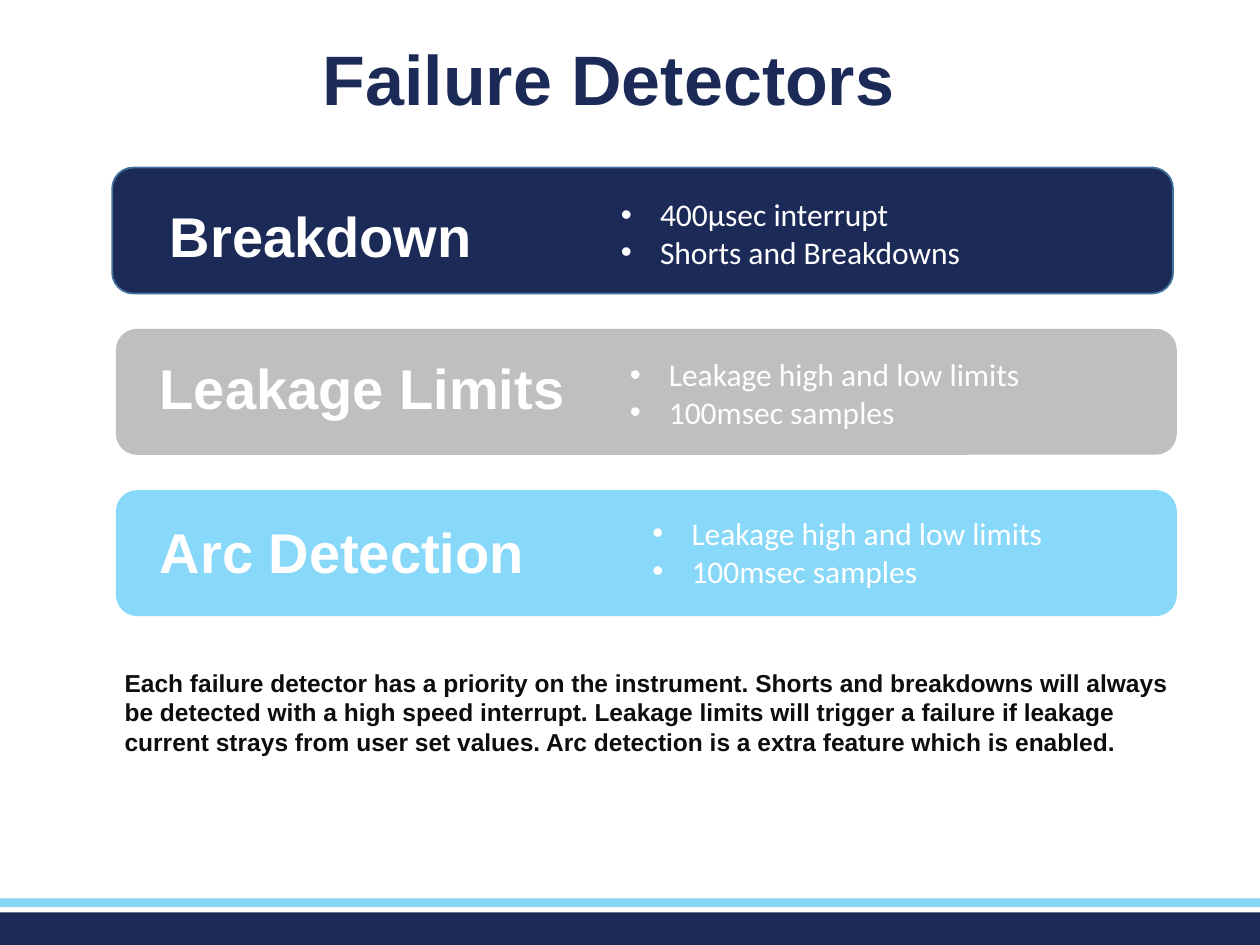
from lxml import etree
from pptx import Presentation
from pptx.dml.color import RGBColor
from pptx.enum.shapes import MSO_SHAPE
from pptx.enum.text import MSO_ANCHOR, PP_ALIGN
from pptx.oxml.ns import qn
from pptx.util import Inches, Pt

RECT, ROUND = MSO_SHAPE.RECTANGLE, MSO_SHAPE.ROUNDED_RECTANGLE
TOP, MIDDLE = MSO_ANCHOR.TOP, MSO_ANCHOR.MIDDLE
LEFT, CENTER = PP_ALIGN.LEFT, PP_ALIGN.CENTER
WIDE, HIGH = Inches(10), Inches(7.5)
COLS, ROWS = 100, 75
INK = {"navy": "1C2A58", "edge": "43739E", "gray": "BFBFBF", "sky": "87D8F9",
       "strip": "88D6F4", "white": "FFFFFF", "black": "0D0D0D"}
LIMITS = ["Leakage high and low limits", "100msec samples"]
BANDS = [
    ("Breakdown", ["400μsec interrupt", "Shorts and Breakdowns"],
     "navy", "edge", 8.9, (3.6, 2.2), (39.4, 1.7)),
    ("Leakage Limits", LIMITS, "gray", None, 9.2, (2.5, 1.5), (39.8, 1.6)),
    ("Arc Detection", LIMITS, "sky", None, 9.2, (2.5, 1.7), (41.6, 1.4)),
]
NOTE = ("Each failure detector has a priority on the instrument. Shorts and "
        "breakdowns will always be detected with a high speed interrupt. "
        "Leakage limits will trigger a failure if leakage current strays from "
        "user set values. Arc detection is a extra feature which is enabled.")


def place(box):
    """Turn a box in columns and rows into slide lengths."""
    x, y, w, h = box
    return (int(WIDE * x / COLS), int(HIGH * y / ROWS),
            int(WIDE * w / COLS), int(HIGH * h / ROWS))


def block(slide, kind, box, fill, edge=None):
    """Draw a filled shape with an optional outline."""
    shape = slide.shapes.add_shape(kind, *place(box))
    shape.shadow.inherit = False
    shape.fill.solid()
    shape.fill.fore_color.rgb = RGBColor.from_string(INK[fill])
    if edge:
        shape.line.color.rgb = RGBColor.from_string(INK[edge])
        shape.line.width = Pt(1)
    else:
        shape.line.fill.background()


def bullet(para):
    """Give a paragraph a round bullet and a hanging indent."""
    props = para._p.get_or_add_pPr()
    props.set("marL", str(Inches(0.31)))
    props.set("indent", str(-Inches(0.31)))
    etree.SubElement(props, qn("a:buFont")).set("typeface", "Arial")
    etree.SubElement(props, qn("a:buChar")).set("char", "•")


def write(slide, box, lines, size, color, face="Arial", bold=True,
          align=LEFT, anchor=TOP, dots=False, lead=None):
    """Set lines of text in a box, with bullets if asked."""
    frame = slide.shapes.add_textbox(*place(box)).text_frame
    frame.word_wrap = True
    frame.vertical_anchor = anchor
    for i, line in enumerate(lines):
        para = frame.add_paragraph() if i else frame.paragraphs[0]
        para.text = line
        para.alignment = align
        if lead:
            para.line_spacing = lead
        if dots:
            bullet(para)
        font = para.font
        font.name, font.size, font.bold = face, Pt(size), bold
        font.color.rgb = RGBColor.from_string(INK[color])


def footer(slide, box):
    """Draw the thin strip and the dark bar at the foot."""
    x, y, w, h = box
    block(slide, RECT, (x, y + h * 0.3, w, h * 0.7), "navy")
    block(slide, RECT, (x, y, w, h * 0.19), "strip")


def band(slide, box, name, facts, fill, edge, head, list_at):
    """Draw one detector with its name and facts."""
    x, y, w, h = box
    block(slide, ROUND, box, fill, edge)
    write(slide, (x + head[0], y + head[1], w * 0.425, h * 0.64),
          [name], 32, "white")
    write(slide, (x + list_at[0], y + list_at[1], w * 0.455, h * 0.71),
          facts, 18, "white", "Calibri", False, dots=True)


def stack(slide, box, step):
    """Stack the detector bands at equal steps."""
    y, w, h = box
    for i, (name, facts, fill, edge, x, head, list_at) in enumerate(BANDS):
        band(slide, (x, y + i * step, w, h), name, facts, fill, edge,
             head, list_at)


def main():
    """Build and save the slide."""
    deck = Presentation()
    deck.slide_width, deck.slide_height = WIDE, HIGH
    slide = deck.slides.add_slide(deck.slide_layouts[6])
    footer(slide, (0, 71.3, COLS, 3.7))
    write(slide, (3.3, 3.3, 90, 6.6), ["Failure Detectors"], 40, "navy",
          align=CENTER, anchor=MIDDLE, lead=0.9)
    stack(slide, (13.3, 84.2, 10), 12.8)
    write(slide, (8.9, 52.5, 85.9, 8.1), [NOTE], 14, "black")
    deck.save("out.pptx")


if __name__ == "__main__":
    main()
